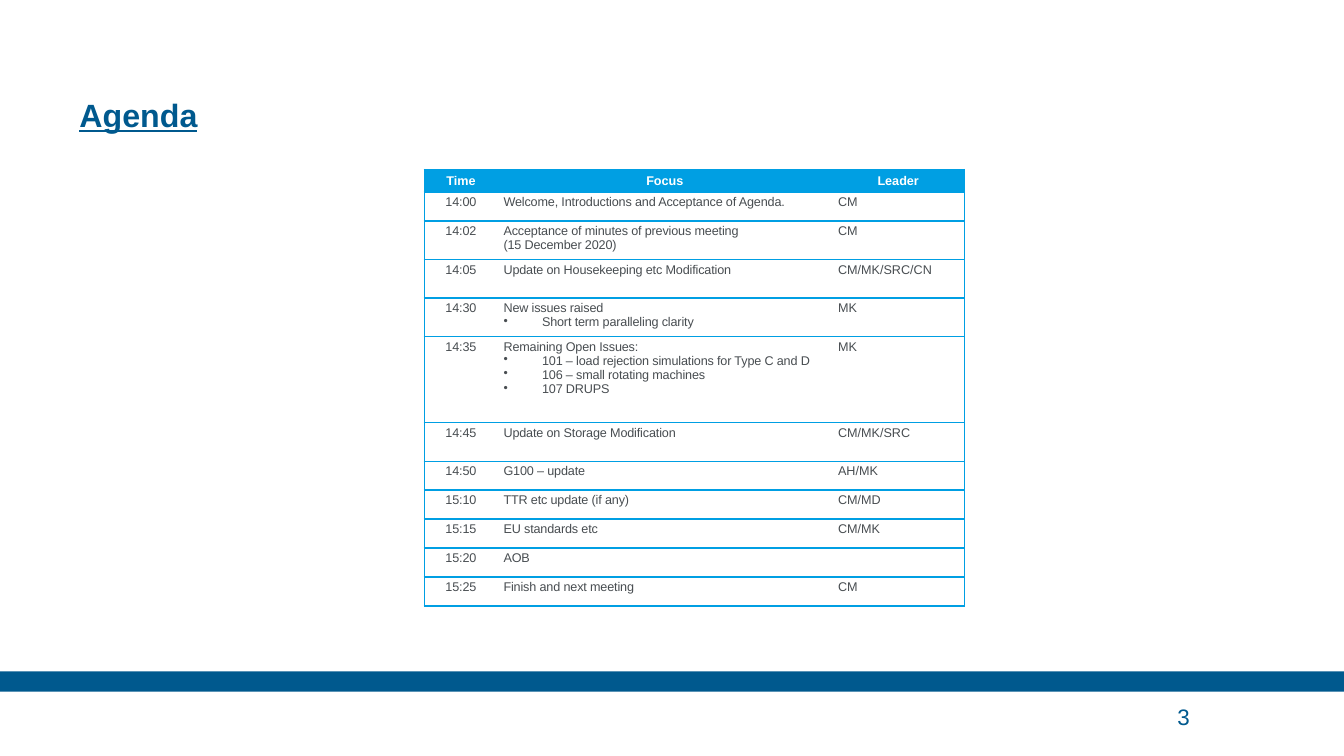
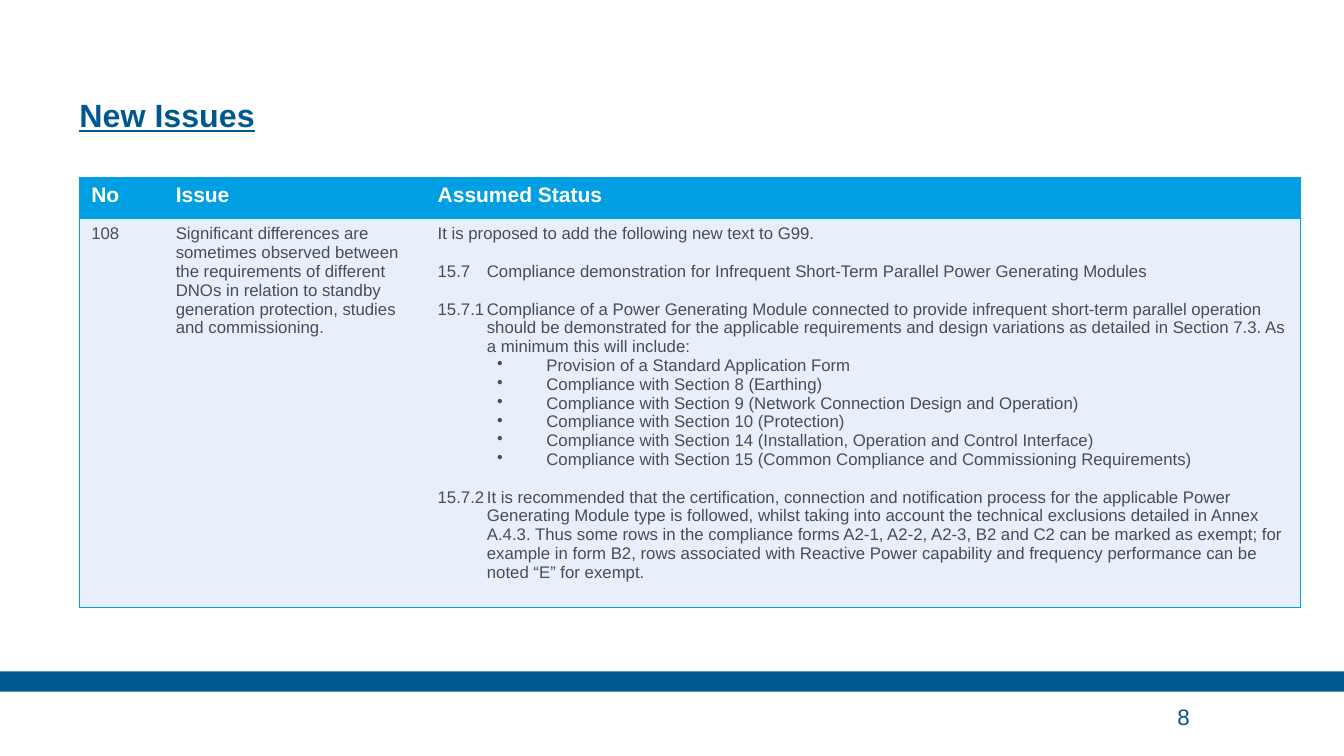
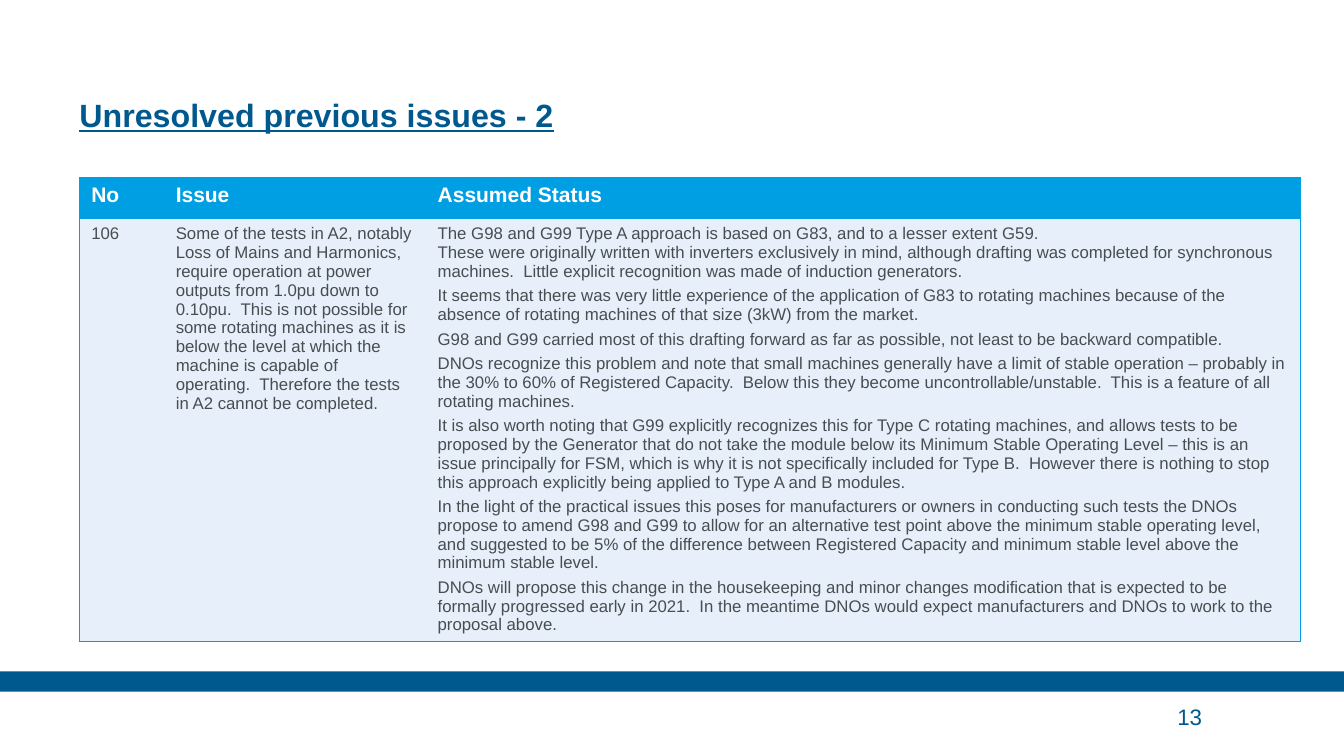
from lxml.etree import SubElement
from pptx import Presentation
from pptx.dml.color import RGBColor
from pptx.enum.shapes import MSO_SHAPE
from pptx.enum.text import MSO_ANCHOR, MSO_AUTO_SIZE, PP_ALIGN
from pptx.oxml.ns import qn
from pptx.util import Cm, Pt

COLORS = {"navy": "00598E", "cyan": "009FE3", "pale": "E7F0FA",
          "text": "484D51", "white": "FFFFFF"}
FONT = "Arial"
SLIDE_W, SLIDE_H = Cm(33.87), Cm(19.05)
LEFT = 2
LINE_GAP = 13.4  # one line of 12 pt text


def rgb(name):
    return RGBColor.from_string(COLORS[name])


def para(text, **fmt):
    """A paragraph with its own format."""
    return text, fmt


def bullet(text, left, hang):
    return para(text, left=left, hang=hang, char="•")


# Text
def write(p, text, size=12, color="text", bold=False, underline=False,
          align=PP_ALIGN.LEFT, left=0, hang=0, char=None, before=0, after=0,
          exact=None, spacing=None):
    """Fill one paragraph with formatted text; a newline is a line break."""
    p.alignment = align
    p.space_before, p.space_after = Pt(before), Pt(after)
    if exact:
        p.line_spacing = Pt(exact)
    pPr = p._p.get_or_add_pPr()
    pPr.set("marL", str(Cm(left)))
    pPr.set("indent", str(-Cm(hang)))
    if char:
        SubElement(pPr, qn("a:buChar")).set("char", char)
    if not text:
        SubElement(p._p, qn("a:endParaRPr")).set("sz", str(size * 100))
        return
    for i, line in enumerate(text.split("\n")):
        if i:
            p.add_line_break()
        r = p.add_run()
        r.text = line
        f = r.font
        f.name, f.size, f.bold, f.underline = FONT, Pt(size), bold, underline
        f.color.rgb = rgb(color)
        if spacing:
            r._r.get_or_add_rPr().set("spc", str(spacing))


def frame(tf, anchor):
    """Give a text frame no margins and a fixed size."""
    tf.margin_left = tf.margin_right = tf.margin_top = tf.margin_bottom = 0
    tf.word_wrap = True
    tf.auto_size = MSO_AUTO_SIZE.NONE
    tf.vertical_anchor = anchor
    return tf.paragraphs[0]


# Slide parts
def add_slide(prs, layout, title, number):
    s = prs.slides.add_slide(layout)
    sp = s.shapes.title
    sp.left, sp.top, sp.width, sp.height = Cm(LEFT), Cm(0.79), Cm(25), Cm(2.59)
    write(frame(sp.text_frame, MSO_ANCHOR.BOTTOM), title, size=23,
          color="navy", bold=True, underline=True, exact=30)
    sp = s.shapes.add_textbox(Cm(29.67), Cm(17.55), Cm(3.12), Cm(0.99))
    write(frame(sp.text_frame, MSO_ANCHOR.MIDDLE), str(number), size=16,
          color="navy")
    return s


def add_band(s, layout):
    """Draw the bottom band and move it to the layout that slides share."""
    sp = s.shapes.add_shape(MSO_SHAPE.RECTANGLE, 0, Cm(16.92), SLIDE_W, Cm(0.51))
    sp.shadow.inherit = False
    sp.fill.solid()
    sp.fill.fore_color.rgb = rgb("navy")
    sp.line.fill.background()
    layout.shapes.element.append(sp.element)


# Tables
def set_borders(cell, first, last):
    """Rule above and below each cell, and at the outer sides only."""
    tcPr = cell._tc.get_or_add_tcPr()
    for side, shown in (("L", first), ("R", last), ("T", True), ("B", True)):
        ln = SubElement(tcPr, qn(f"a:ln{side}"))
        if shown:
            ln.set("w", str(Pt(1)))
            fill = SubElement(ln, qn("a:solidFill"))
            SubElement(fill, qn("a:srgbClr")).set("val", COLORS["cyan"])
        else:
            SubElement(ln, qn("a:noFill"))


def fill_cell(cell, content, fill, margins, fmt):
    cell.fill.solid()
    cell.fill.fore_color.rgb = rgb(fill)
    cell.margin_left = cell.margin_right = Cm(margins[0])
    cell.margin_top = cell.margin_bottom = Cm(margins[1])
    tf = cell.text_frame
    items = content if isinstance(content, list) else [content]
    for i, item in enumerate(items):
        text, own = item if isinstance(item, tuple) else (item, {})
        p = tf.add_paragraph() if i else tf.paragraphs[0]
        write(p, text, **{**fmt, **own})


def add_grid(s, left, top, widths, heights, rows, margins, head, body, fill):
    """Table with a cyan header; body holds one format per column."""
    tbl = s.shapes.add_table(len(rows), len(widths), Cm(left), Cm(top),
                             Cm(sum(widths)), Cm(sum(heights))).table
    tbl.horz_banding = False
    for col, width in zip(tbl.columns, widths):
        col.width = Cm(width)
    for r, (cells, height) in enumerate(zip(rows, heights)):
        tbl.rows[r].height = Cm(height)
        for c, content in enumerate(cells):
            cell = tbl.cell(r, c)
            set_borders(cell, c == 0, c == len(widths) - 1)
            fill_cell(cell, content, fill if r else "cyan", margins,
                      body[c] if r else {"color": "white", "bold": True, **head})
    return tbl


def add_agenda(s, entries):
    """Entries are (height, time, focus, leader)."""
    tbl = add_grid(
        s, 10.69, 4.27, [1.85, 8.43, 3.33],
        [0.57] + [e[0] for e in entries],
        [("Time", "Focus", "Leader")] + [e[1:] for e in entries],
        margins=(0.15, 0.08), head={"size": 9, "align": PP_ALIGN.CENTER},
        body=[{"size": 9, "align": PP_ALIGN.CENTER, "spacing": -10},
              {"size": 9, "spacing": -10}, {"size": 9}],
        fill="white")
    for cell in tbl.rows[0].cells:
        cell.vertical_anchor = MSO_ANCHOR.MIDDLE


def add_issue(s, height, number, issue, status):
    add_grid(s, LEFT, 4.47, [2.13, 6.6, 22.05], [1.04, height],
             [("No", "Issue", "Assumed Status"), (number, issue, status)],
             margins=(0.3, 0.15), head={"size": 15}, body=[{}] * 3, fill="pale")


# Content
ONE, TWO, FIVE = 0.73, 0.97, 2.17  # agenda row heights

AGENDA = [
    (ONE, "14:00", "Welcome, Introductions and Acceptance of Agenda.", "CM"),
    (TWO, "14:02", "Acceptance of minutes of previous meeting \n(15 December 2020)", "CM"),
    (TWO, "14:05", "Update on Housekeeping etc Modification", "CM/MK/SRC/CN"),
    (TWO, "14:30", ["New issues raised",
                    bullet("Short term paralleling clarity", 0.97, 0.97)], "MK"),
    (FIVE, "14:35", ["Remaining Open Issues:"] + [
        bullet(t, 0.97, 0.97) for t in (
            "101 – load rejection simulations for Type C and D",
            "106 – small rotating machines",
            "107 DRUPS")], "MK"),
    (TWO, "14:45", "Update on Storage Modification", "CM/MK/SRC"),
    (ONE, "14:50", "G100 – update", "AH/MK"),
    (ONE, "15:10", "TTR etc update (if any)", "CM/MD"),
    (ONE, "15:15", "EU standards etc", "CM/MK"),
    (ONE, "15:20", "AOB", ""),
    (ONE, "15:25", "Finish and next meeting", "CM"),
]

CLAUSE = {"left": 1.24, "hang": 1.24, "before": LINE_GAP}

NEW_ISSUE = (
    "Significant differences are sometimes observed between the requirements of "
    "different DNOs in relation to standby generation protection, studies and "
    "commissioning.")
NEW_STATUS = [
    "It is proposed to add the following new text to G99.",
    para("15.7\tCompliance demonstration for Infrequent Short-Term Parallel Power "
         "Generating Modules", **CLAUSE),
    para("15.7.1\tCompliance of a Power Generating Module connected to provide "
         "infrequent short-term parallel operation should be demonstrated for the "
         "applicable requirements and design variations as detailed in Section 7.3. "
         "As a minimum this will include:", **CLAUSE),
    *[bullet(t, 2.74, 1.24) for t in (
        "Provision of a Standard Application Form",
        "Compliance with Section 8 (Earthing)",
        "Compliance with Section 9 (Network Connection Design and Operation)",
        "Compliance with Section 10 (Protection)",
        "Compliance with Section 14 (Installation, Operation and Control Interface)",
        "Compliance with Section 15 (Common Compliance and Commissioning Requirements)")],
    para("15.7.2\tIt is recommended that the certification, connection and "
         "notification process for the applicable Power Generating Module type is "
         "followed, whilst taking into account the technical exclusions detailed in "
         "Annex A.4.3. Thus some rows in the compliance forms A2-1, A2-2, A2-3, B2 "
         "and C2 can be marked as exempt; for example in form B2, rows associated "
         "with Reactive Power capability and frequency performance can be noted “E” "
         "for exempt.", **CLAUSE),
]

OLD_ISSUE = (
    "Some of the tests in A2, notably Loss of Mains and Harmonics, require operation "
    "at power outputs from 1.0pu down to 0.10pu.  This is not possible for some "
    "rotating machines as it is below the level at which the machine is capable of "
    "operating.  Therefore the tests in A2 cannot be completed.")
OLD_STATUS = [
    "The G98 and G99 Type A approach is based on G83, and to a lesser extent G59.",
    *[para(t, after=4) for t in (
        "These were originally written with inverters exclusively in mind, although "
        "drafting was completed for synchronous machines.  Little explicit "
        "recognition was made of induction generators.",
        "It seems that there was very little experience of the application of G83 to "
        "rotating machines because of the absence of rotating machines of that size "
        "(3kW) from the market.",
        "G98 and G99 carried most of this drafting forward as far as possible, not "
        "least to be backward compatible.",
        "DNOs recognize this problem and note that small machines generally have a "
        "limit of stable operation – probably in the 30% to 60% of Registered "
        "Capacity.  Below this they become uncontrollable/unstable.  This is a "
        "feature of all rotating machines.",
        "It is also worth noting that G99 explicitly recognizes this for Type C "
        "rotating machines, and allows tests to be proposed by the Generator that do "
        "not take the module below its Minimum Stable Operating Level – this is an "
        "issue principally for FSM, which is why it is not specifically included for "
        "Type B.  However there is nothing to stop this approach explicitly being "
        "applied to Type A and B modules.",
        "In the light of the practical issues this poses for manufacturers or owners "
        "in conducting such tests the DNOs propose to amend G98 and G99 to allow for "
        "an alternative test point above the minimum stable operating level, and "
        "suggested to be 5% of the difference between Registered Capacity and minimum "
        "stable level above the minimum stable level.",
        "DNOs will propose this change in the housekeeping and minor changes "
        "modification that is expected to be formally progressed early in 2021.  In "
        "the meantime DNOs would expect manufacturers and DNOs to work to the "
        "proposal above.")],
]


def main():
    prs = Presentation()
    prs.slide_width, prs.slide_height = SLIDE_W, SLIDE_H
    layout = prs.slide_layouts[5]

    s = add_slide(prs, layout, "Agenda", 3)
    add_band(s, layout)
    add_agenda(s, AGENDA)

    s = add_slide(prs, layout, "New Issues", 8)
    add_issue(s, 9.8, "108", NEW_ISSUE, NEW_STATUS)

    s = add_slide(prs, layout, "Unresolved previous issues - 2", 13)
    add_issue(s, 10.65, "106", OLD_ISSUE, OLD_STATUS)

    prs.save("out.pptx")


if __name__ == "__main__":
    main()
